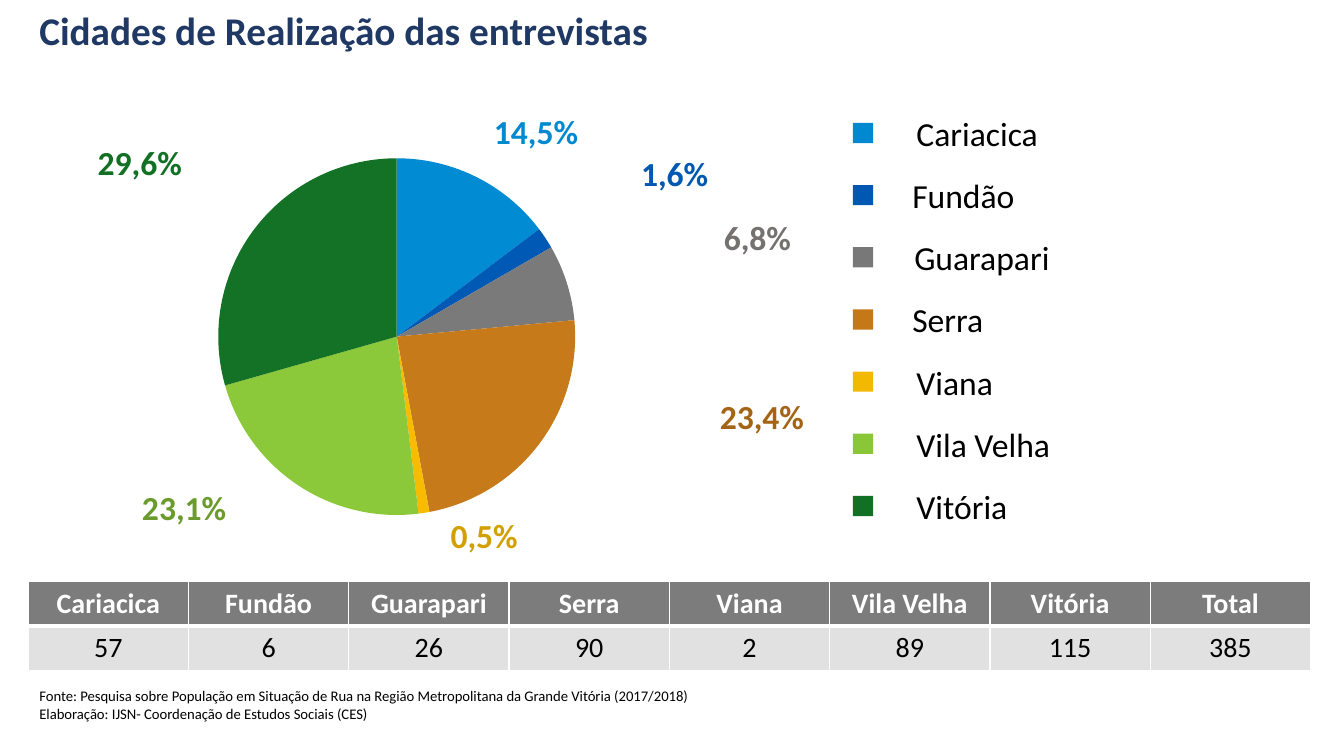
from lxml import etree
from pptx import Presentation
from pptx.chart.data import CategoryChartData
from pptx.dml.color import RGBColor
from pptx.enum.chart import XL_CHART_TYPE
from pptx.enum.shapes import MSO_SHAPE
from pptx.enum.text import MSO_ANCHOR, MSO_AUTO_SIZE, PP_ALIGN
from pptx.oxml.ns import qn
from pptx.util import Inches, Pt

PIE = XL_CHART_TYPE.PIE
RECTANGLE = MSO_SHAPE.RECTANGLE
MIDDLE, BOTTOM = MSO_ANCHOR.MIDDLE, MSO_ANCHOR.BOTTOM
LEFT, CENTER = PP_ALIGN.LEFT, PP_ALIGN.CENTER
NO_AUTOFIT = MSO_AUTO_SIZE.NONE

# Content
TITLE = "Cidades de Realização das entrevistas"
SOURCE = [
    "Fonte: Pesquisa sobre População em Situação de Rua na Região "
    "Metropolitana da Grande Vitória (2017/2018)",
    "Elaboração: IJSN- Coordenação de Estudos Sociais (CES)",
]
# city, interviews, pie value, share label, label position, legend text left and width
CITIES = [
    ("Cariacica", 57, 15, "14,5%", (4.8, 1.05), (8.99, 1.42)),
    ("Fundão", 6, 2, "1,6%", (6.26, 1.47), (8.95, 1.23)),
    ("Guarapari", 26, 7, "6,8%", (7.08, 2.1), (8.97, 1.56)),
    ("Serra", 90, 24, "23,4%", (7.04, 3.88), (8.95, 0.91)),
    ("Viana", 2, 1, "0,5%", (4.37, 5.06), (8.99, 0.97)),
    ("Vila Velha", 89, 23, "23,1%", (1.31, 4.78), (8.99, 1.54)),
    ("Vitória", 115, 30, "29,6%", (0.87, 1.36), (8.99, 1.11)),
]

THEME = {
    "font": "Calibri",
    "title": "203864", "text": "000000", "white": "FFFFFF",
    "header": "7C7C7C", "row": "E1E1E1",
    "slices": ["008BD3", "005AB5", "7A7A7A", "C77A1A", "F7BB00", "8BC93A", "147226"],
    "swatches": ["0089D1", "0058B3", "787878", "C57818", "F3B900", "89C738", "127024"],
    "labels": ["0089D1", "0058B3", "767171", "A46415", "D2A000", "6C9B2D", "127024"],
    "title_size": 28, "label_size": 24, "table_size": 20, "source_size": 10.5,
    "chart_size": 10,
}

LABEL_HEIGHT = 0.5
LABEL_WIDTHS = {4: 0.88, 5: 1.05}  # by number of characters
SWATCH_LEFT, SWATCH_TOP, SWATCH_SIZE = 8.46, 1.22, 0.2
LEGEND_TOP, LEGEND_STEP = 1.07, 3.7 / 6


def rgb(value):
    return RGBColor.from_string(value)


def write(p, text, size, color=THEME["text"], bold=False, align=LEFT):
    p.alignment = align
    r = p.add_run()
    r.text = text
    r.font.name = THEME["font"]
    r.font.size = Pt(size)
    r.font.bold = bold
    r.font.color.rgb = rgb(color)


def place(s, left, top, width, height):
    s.left, s.top = Inches(left), Inches(top)
    s.width, s.height = Inches(width), Inches(height)


def add_label(shapes, text, left, top, width, **style):
    box = shapes.add_textbox(Inches(left), Inches(top), Inches(width), Inches(LABEL_HEIGHT))
    box.text_frame.word_wrap = False
    write(box.text_frame.paragraphs[0], text, THEME["label_size"], **style)


def set_borders(cell, **widths):
    tc_pr = cell._tc.get_or_add_tcPr()
    for side in "LRTB":
        ln = etree.SubElement(tc_pr, qn(f"a:ln{side}"), w=str(Pt(widths.get(side, 1))))
        fill = etree.SubElement(ln, qn("a:solidFill"))
        etree.SubElement(fill, qn("a:srgbClr"), val=THEME["white"])


def fill_plot_area(chart):
    plot_area = chart.element.find(qn("c:chart")).find(qn("c:plotArea"))
    for old in plot_area.findall(qn("c:layout")):
        plot_area.remove(old)
    layout = etree.Element(qn("c:layout"))
    manual = etree.SubElement(layout, qn("c:manualLayout"))
    for tag, val in (("layoutTarget", "inner"), ("xMode", "edge"), ("yMode", "edge"),
                     ("x", "0"), ("y", "0"), ("w", "1"), ("h", "1")):
        etree.SubElement(manual, qn(f"c:{tag}"), val=val)
    plot_area.insert(0, layout)


def add_pie(s):
    data = CategoryChartData(number_format="0")
    data.categories = [city[0] for city in CITIES]
    data.add_series("Entrevistas (%)", [city[2] for city in CITIES])
    chart = s.shapes.add_chart(PIE, Inches(0), Inches(1.57), Inches(7.87),
                               Inches(3.54), data).chart
    chart.has_legend = False
    chart.has_title = False
    chart.font.name = THEME["font"]
    chart.font.size = Pt(THEME["chart_size"])
    chart.font.color.rgb = rgb(THEME["text"])
    plot = chart.plots[0]
    plot.vary_by_categories = True
    for i, color in enumerate(THEME["slices"]):
        fill = plot.series[0].points[i].format.fill
        fill.solid()
        fill.fore_color.rgb = rgb(color)
    fill_plot_area(chart)


def add_counts(s):
    rows = [[city[0] for city in CITIES] + ["Total"],
            [city[1] for city in CITIES] + [sum(city[1] for city in CITIES)]]
    table = s.shapes.add_table(2, len(rows[0]), Inches(0.28), Inches(5.77),
                               Inches(12.72), Inches(0.87)).table
    formats = [(THEME["header"], THEME["white"], True, {"B": 3}),
               (THEME["row"], THEME["text"], False, {"T": 3})]
    for i, (values, (back, color, bold, borders)) in enumerate(zip(rows, formats)):
        for j, value in enumerate(values):
            cell = table.cell(i, j)
            set_borders(cell, **borders)
            cell.fill.solid()
            cell.fill.fore_color.rgb = rgb(back)
            write(cell.text_frame.paragraphs[0], str(value), THEME["table_size"],
                  color=color, bold=bold, align=CENTER)


def add_legend_entry(s, i, name, left, width):
    shapes = s.shapes.add_group_shape().shapes
    swatch = shapes.add_shape(RECTANGLE, Inches(SWATCH_LEFT),
                              Inches(SWATCH_TOP + i * LEGEND_STEP),
                              Inches(SWATCH_SIZE), Inches(SWATCH_SIZE))
    swatch.shadow.inherit = False
    swatch.fill.solid()
    swatch.fill.fore_color.rgb = rgb(THEME["swatches"][i])
    swatch.line.fill.background()
    add_label(shapes, name, left, LEGEND_TOP + i * LEGEND_STEP, width)


def main():
    prs = Presentation()
    prs.slide_width, prs.slide_height = Inches(13.33), Inches(7.5)
    s = prs.slides.add_slide(prs.slide_layouts[1])

    # Title
    place(s.shapes.title, 0.29, 0.03, 12.72, 0.62)
    tf = s.shapes.title.text_frame
    tf.auto_size = NO_AUTOFIT
    tf.vertical_anchor = MIDDLE
    p = tf.paragraphs[0]
    p.line_spacing = 0.8
    write(p, TITLE, THEME["title_size"], color=THEME["title"], bold=True)

    # Pie and table
    add_pie(s)
    add_counts(s)

    # Share labels and legend
    for i, (name, _, _, share, (left, top), legend) in enumerate(CITIES):
        add_label(s.shapes, share, left, top, LABEL_WIDTHS[len(share)],
                  color=THEME["labels"][i], bold=True)
        add_legend_entry(s, i, name, *legend)

    # Source note
    body = s.placeholders[1]
    place(body, 0.29, 6.64, 12.72, 0.58)
    tf = body.text_frame
    tf.auto_size = NO_AUTOFIT
    tf.vertical_anchor = BOTTOM
    for i, line in enumerate(SOURCE):
        p = tf.add_paragraph() if i else tf.paragraphs[0]
        p_pr = p._p.get_or_add_pPr()
        p_pr.set("marL", "0")
        p_pr.set("indent", "0")
        etree.SubElement(p_pr, qn("a:buNone"))
        p.space_before = Pt(0.5 if i else 0)
        write(p, line, THEME["source_size"])

    prs.save("out.pptx")


if __name__ == "__main__":
    main()
